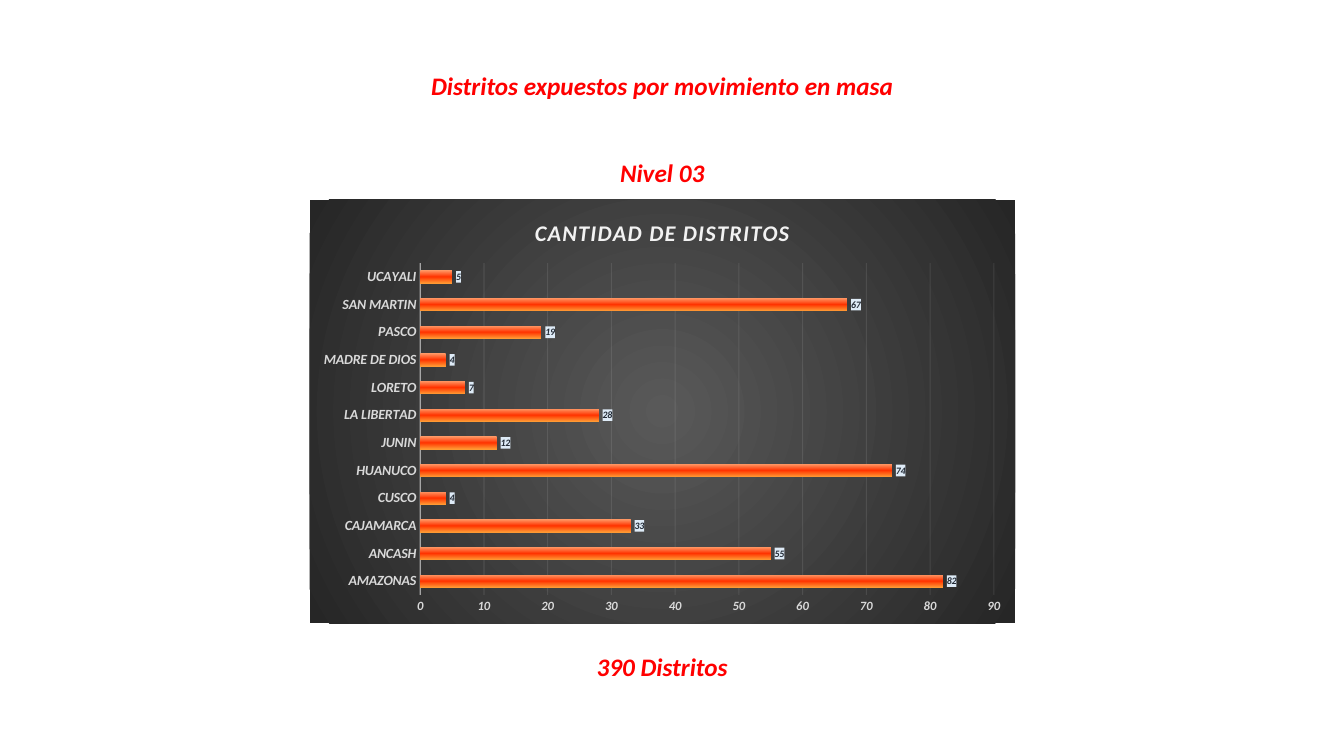
from lxml.etree import SubElement
from pptx import Presentation
from pptx.chart.data import CategoryChartData as ChartData
from pptx.dml.color import RGBColor
from pptx.enum.chart import XL_CHART_TYPE as Kind
from pptx.enum.chart import XL_LABEL_POSITION as Spot
from pptx.enum.chart import XL_TICK_MARK as Tick
from pptx.enum.text import PP_ALIGN as Align
from pptx.oxml import parse_xml
from pptx.oxml.ns import nsdecls, qn
from pptx.util import Cm, Pt

FACE = "Calibri"
RED = RGBColor(0xFF, 0x00, 0x00)
WHITE = RGBColor(0xF2, 0xF2, 0xF2)
GREY = RGBColor(0xD9, 0xD9, 0xD9)
NAVY = RGBColor(0x22, 0x2A, 0x35)
PALE = RGBColor(0xDE, 0xEB, 0xF7)
COAL = RGBColor(0x59, 0x59, 0x59)
DARK = RGBColor(0x26, 0x26, 0x26)
PEACH = RGBColor(0xFF, 0x99, 0x66)
FLAME = RGBColor(0xFF, 0x33, 0x00)
AMBER = RGBColor(0xFF, 0x99, 0x33)

# text, top and width in cm
LINES = [
    ("Distritos expuestos por movimiento en masa", 1.65, 12.29),
    ("Nivel 03", 3.84, 2.69),
    ("390 Distritos", 16.28, 4.24),
]
TITLE = "CANTIDAD DE DISTRITOS"
COUNTS = {
    "AMAZONAS": 82, "ANCASH": 55, "CAJAMARCA": 33, "CUSCO": 4,
    "HUANUCO": 74, "JUNIN": 12, "LA LIBERTAD": 28, "LORETO": 7,
    "MADRE DE DIOS": 4, "PASCO": 19, "SAN MARTIN": 67, "UCAYALI": 5,
}
MID = 16.69
CHART = (7.8, 5.03, 17.78, 10.67)
PLOT = {"x": 0.157, "y": 0.15, "w": 0.813, "h": 0.784}
RADIAL = '<a:path path="circle"><a:fillToRect l="50000" t="50000" r="50000" b="50000"/></a:path>'
DOWN = '<a:lin ang="5400000" scaled="0"/>'


def style(font, size, color):
    font.name, font.size = FACE, Pt(size)
    font.bold = font.italic = True
    font.color.rgb = color


def blend(stops, way):
    """Return a gradient fill with evenly spaced stops."""
    step = 100000 // (len(stops) - 1)
    marks = "".join(
        f'<a:gs pos="{i * step}"><a:srgbClr val="{c}"/></a:gs>'
        for i, c in enumerate(stops))
    return parse_xml(f'<a:gradFill {nsdecls("a")} rotWithShape="1">'
                     f'<a:gsLst>{marks}</a:gsLst>{way}</a:gradFill>')


def box(fill):
    """Return chart shape properties with a fill and no line."""
    props = parse_xml(f'<c:spPr {nsdecls("c", "a")}><a:ln><a:noFill/></a:ln></c:spPr>')
    props.insert(0, fill)
    return props


def rule(line, width, axis, alpha):
    line.color.rgb, line.width = WHITE, Pt(width)
    tint = next(axis._element.iter(qn("a:srgbClr")))
    SubElement(tint, qn("a:alpha")).set("val", str(alpha * 1000))


def add_line(slide, text, top, width):
    frame = slide.shapes.add_textbox(
        Cm(MID - width / 2), Cm(top), Cm(width), Cm(1.02)).text_frame
    frame.word_wrap = False
    para = frame.paragraphs[0]
    para.text, para.alignment = text, Align.CENTER
    style(para.font, 18, RED)


def set_title(chart):
    para = chart.chart_title.text_frame.paragraphs[0]
    para.text = TITLE
    style(para.font, 16, WHITE)
    para.font._element.set("spc", "100")
    chart.chart_title.include_in_layout = False


def set_axes(chart):
    cat, val = chart.category_axis, chart.value_axis
    rule(cat.format.line, 1, cat, 54)
    rule(val.major_gridlines.format.line, 0.75, val, 10)
    val.format.line.fill.background()
    val.minimum_scale, val.maximum_scale, val.major_unit = 0, 90, 10
    for axis, size in ((cat, 10), (val, 9)):
        axis.major_tick_mark = axis.minor_tick_mark = Tick.NONE
        style(axis.tick_labels.font, size, GREY)
    val.tick_labels.number_format = "#,##0"
    val.tick_labels.number_format_is_linked = False


def set_bars(plot):
    plot.gap_width, plot.overlap, plot.vary_by_categories = 115, -20, False
    bars = plot.series[0]
    bars.invert_if_negative = False
    bars._element.get_or_add_spPr().append(blend([PEACH, FLAME, AMBER], DOWN))
    tags = bars.data_labels
    tags.show_value, tags.position = True, Spot.OUTSIDE_END
    tags.number_format, tags.number_format_is_linked = "#,##0", False
    style(tags.font, 7, NAVY)
    fill = parse_xml(f'<a:solidFill {nsdecls("a")}><a:srgbClr val="{PALE}"/></a:solidFill>')
    tags._element.find(qn("c:txPr")).addprevious(box(fill))


def set_area(chart):
    """Fill the chart background and fix the inner plot area."""
    root = chart.element.find(qn("c:chart"))
    root.addnext(box(blend([COAL, DARK], RADIAL)))
    area = root.find(qn("c:plotArea"))
    old = area.find(qn("c:layout"))
    if old is not None:
        area.remove(old)
    sizes = "".join(f'<c:{k} val="{v}"/>' for k, v in PLOT.items())
    area.insert(0, parse_xml(
        f'<c:layout {nsdecls("c")}><c:manualLayout><c:layoutTarget val="inner"/>'
        f'<c:xMode val="edge"/><c:yMode val="edge"/>{sizes}'
        '</c:manualLayout></c:layout>'))


def add_bars(slide):
    data = ChartData(number_format="#,##0")
    data.categories = list(COUNTS)
    data.add_series("Distritos", list(COUNTS.values()))
    chart = slide.shapes.add_chart(
        Kind.BAR_CLUSTERED, *map(Cm, CHART), data).chart
    chart.has_legend = False
    chart.font.name, chart.font.size = FACE, Pt(10)
    set_title(chart)
    set_axes(chart)
    set_bars(chart.plots[0])
    set_area(chart)


def main():
    deck = Presentation()
    deck.slide_width, deck.slide_height = Cm(33.87), Cm(19.05)
    slide = deck.slides.add_slide(deck.slide_layouts[6])
    for line in LINES:
        add_line(slide, *line)
    add_bars(slide)
    deck.save("out.pptx")


if __name__ == "__main__":
    main()
